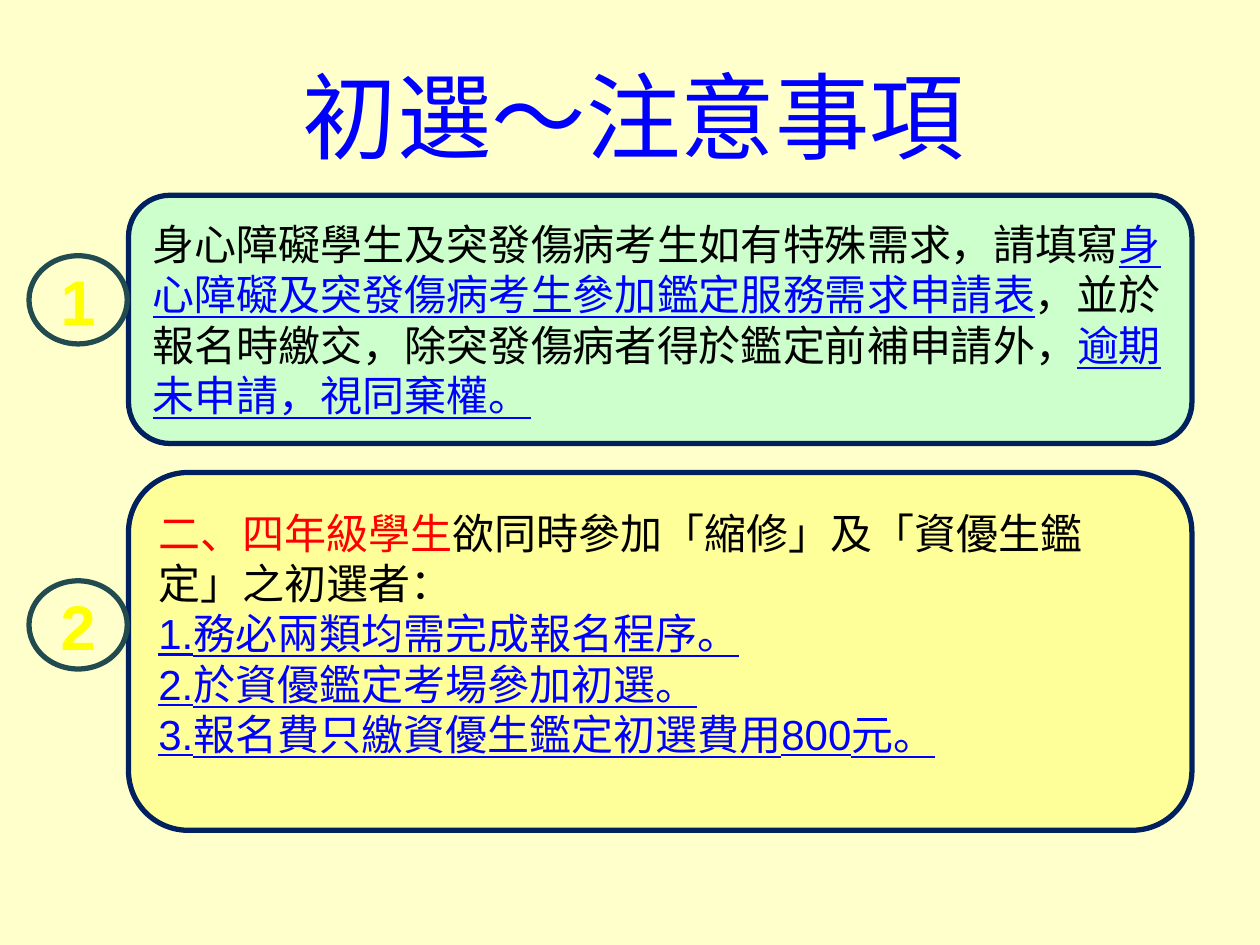
import pptx
import pptx.util
import pptx.dml.color
import pptx.enum.shapes
import pptx.enum.text
from lxml import etree
from pptx.oxml.ns import qn

Inches, Pt = pptx.util.Inches, pptx.util.Pt
SHAPE = pptx.enum.shapes.MSO_SHAPE
ALIGN = pptx.enum.text.PP_ALIGN

TITLE = "初選～注意事項"
BLACK, BLUE, RED, YELLOW = "000000", "0000FF", "FF0000", "FFFF00"
NAVY, TEAL, OUTLINE = "002060", "224B50", "1F1FAD"

# Blue text is underlined throughout.
NOTES = [
    {"top": 1.55, "height": 1.97, "fill": "CCFFCC", "badge_top": 2.03, "bottom_inset": 0.05,
     "paragraphs": [
         [("身心障礙學生及突發傷病考生如有特殊需求，請填寫", BLACK),
          ("身心障礙及突發傷病考生參加鑑定服務需求申請表", BLUE),
          ("，並於報名時繳交，除突發傷病者得於鑑定前補申請外，", BLACK),
          ("逾期未申請，視同棄權。", BLUE)],
     ]},
    {"top": 3.75, "height": 2.84, "fill": "FFFF99", "badge_top": 4.61, "bottom_inset": 0.34,
     "paragraphs": [
         [("二、四年級學生", RED),
          ("欲同時參加「縮修」及「資優生鑑定」之初選者：", BLACK)],
         [("1.務必兩類均需完成報名程序。", BLUE)],
         [("2.於資優鑑定考場參加初選。", BLUE)],
         [("3.報名費只繳資優生鑑定初選費用800元。", BLUE)],
     ]},
]
NOTE_LEFT, NOTE_WIDTH = 1.02, 8.44
BADGE_LEFT, BADGE_WIDTH, BADGE_HEIGHT = 0.23, 0.78, 0.7


def color(value):
    return pptx.dml.color.RGBColor.from_string(value)


def set_font(font, name, size, bold=False):
    font.name, font.size, font.bold = name, Pt(size), bold


def add_shape(slide, kind, left, top, width, height, line, fill=None):
    shape = slide.shapes.add_shape(kind, Inches(left), Inches(top), Inches(width), Inches(height))
    shape.shadow.inherit = False
    if fill:
        shape.fill.solid()
        shape.fill.fore_color.rgb = color(fill)
    else:
        shape.fill.background()
    shape.line.color.rgb = color(line)
    shape.line.width = Pt(3)
    shape.text_frame.word_wrap = True
    shape.text_frame.vertical_anchor = pptx.enum.text.MSO_ANCHOR.MIDDLE
    return shape


def outline_text(span, value, width):
    line = etree.Element(qn("a:ln"), w=str(Pt(width)))
    fill = etree.SubElement(line, qn("a:solidFill"))
    etree.SubElement(fill, qn("a:srgbClr"), val=value)
    span._r.get_or_add_rPr().insert(0, line)


def add_title(slide):
    title = slide.shapes.title
    title.left, title.top = Inches(1.53), Inches(0.52)
    title.width, title.height = Inches(7), Inches(0.78)
    frame = title.text_frame
    frame.text = TITLE
    frame.auto_size = pptx.enum.text.MSO_AUTO_SIZE.NONE
    frame.vertical_anchor = pptx.enum.text.MSO_ANCHOR.MIDDLE
    para = frame.paragraphs[0]
    para.alignment = ALIGN.CENTER
    span = para.runs[0]
    set_font(span.font, "Noto Sans CJK SC", 54)
    span.font.color.rgb = color(BLUE)


def add_note(slide, note):
    box = add_shape(slide, SHAPE.ROUNDED_RECTANGLE, NOTE_LEFT, note["top"],
                    NOTE_WIDTH, note["height"], NAVY, note["fill"])
    frame = box.text_frame
    frame.margin_bottom = Inches(note["bottom_inset"])
    for index, pieces in enumerate(note["paragraphs"]):
        para = frame.add_paragraph() if index else frame.paragraphs[0]
        para.alignment = ALIGN.LEFT
        for text, shade in pieces:
            span = para.add_run()
            span.text = text
            set_font(span.font, "Arial", 24)
            span.font.color.rgb = color(shade)
            span.font.underline = shade == BLUE


def add_badge(slide, number, top):
    badge = add_shape(slide, SHAPE.OVAL, BADGE_LEFT, top, BADGE_WIDTH, BADGE_HEIGHT, TEAL)
    para = badge.text_frame.paragraphs[0]
    para.alignment = ALIGN.CENTER
    span = para.add_run()
    span.text = str(number)
    set_font(span.font, "Arial", 36, bold=True)
    span.font.color.rgb = color(YELLOW)
    outline_text(span, OUTLINE, 1.42)


def main():
    deck = pptx.Presentation()
    deck.slide_width, deck.slide_height = Inches(10), Inches(7.5)
    slide = deck.slides.add_slide(deck.slide_layouts.get_by_name("Title Only"))
    slide.background.fill.solid()
    slide.background.fill.fore_color.rgb = color("FFFFCC")
    add_title(slide)
    for note in NOTES:
        add_note(slide, note)
    for number, note in enumerate(NOTES, start=1):
        add_badge(slide, number, note["badge_top"])
    deck.save("out.pptx")


if __name__ == "__main__":
    main()
